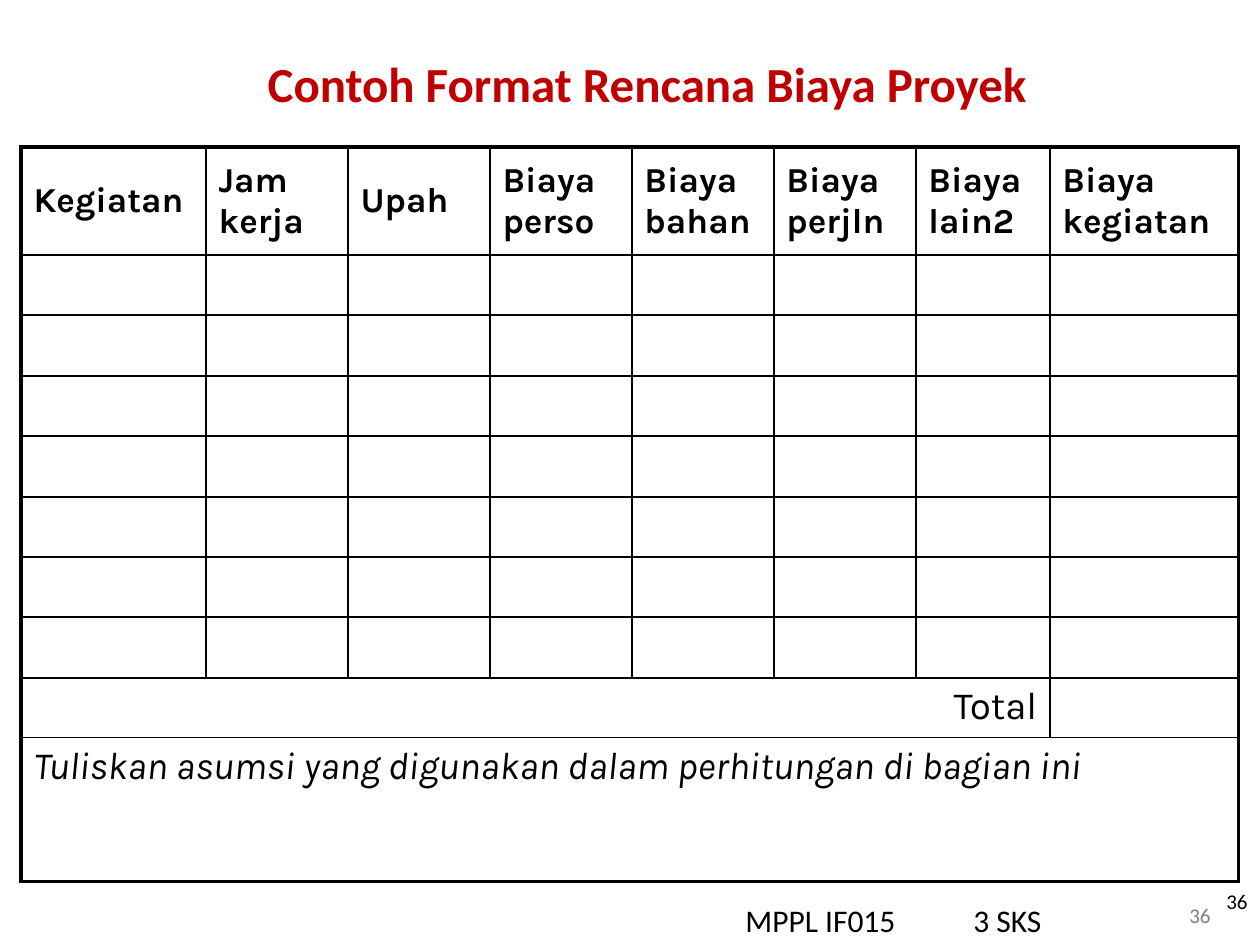
from dataclasses import dataclass

from lxml.etree import SubElement
from pptx import Presentation
from pptx.dml.color import RGBColor
from pptx.enum.text import MSO_ANCHOR as Anchor, PP_ALIGN as Align
from pptx.oxml import parse_xml
from pptx.oxml.ns import nsdecls, qn
from pptx.util import Pt

PX = 914400 // 126
BLACK = RGBColor(0, 0, 0)
RED = RGBColor(0xC0, 0, 0)
GRAY = RGBColor(0x80, 0x80, 0x80)

HEADERS = ("Kegiatan", "Jam kerja", "Upah", "Biaya perso", "Biaya bahan",
           "Biaya perjln", "Biaya lain2", "Biaya kegiatan")
COLUMN_WIDTHS = (185, *[142] * 5, 134, 189)
HEADER_HEIGHT, NOTE_HEIGHT = 108, 144
BODY_ROWS, BODY_HEIGHT = 8, 483
BODY_EDGES = [round(BODY_HEIGHT * i / BODY_ROWS) for i in range(BODY_ROWS + 1)]
ROW_HEIGHTS = (HEADER_HEIGHT,
               *[b - a for a, b in zip(BODY_EDGES, BODY_EDGES[1:])],
               NOTE_HEIGHT)
OUTER_LINE, INNER_LINE = Pt(2.25), Pt(1)


@dataclass(frozen=True)
class Label:
    text: str
    box: tuple[int, int, int, int]
    size: int
    color: RGBColor = BLACK
    align: Align = Align.LEFT
    anchor: Anchor = Anchor.TOP
    bold: bool = False
    tab: int = 0


TITLE = Label("Contoh Format Rencana Biaya Proyek", (95, 42, 1104, 81), 28,
              RED, Align.CENTER, Anchor.MIDDLE, bold=True)
FOOTERS = (
    Label("MPPL IF015\t3 SKS", (733, 895, 527, 40), 18, tab=228),
    Label("36", (966, 876, 294, 50), 12, align=Align.RIGHT, anchor=Anchor.MIDDLE),
    Label("36", (998, 896, 225, 38), 12, GRAY, Align.RIGHT),
)


def set_all(target, values: dict) -> None:
    for name, value in values.items():
        setattr(target, name, value)


def write(frame, text: str, size: int, font: str, color: RGBColor = BLACK,
          align: Align = Align.LEFT, bold: bool = False, italic: bool = False):
    paragraph = frame.paragraphs[0]
    paragraph.alignment = align
    run = paragraph.add_run()
    run.text = text
    set_all(run.font, {"name": font, "size": Pt(size), "bold": bold, "italic": italic})
    run.font.color.rgb = color
    return paragraph


def fill_label(shape, label: Label) -> None:
    left, top, width, height = (value * PX for value in label.box)
    set_all(shape, {"left": left, "top": top, "width": width, "height": height})
    frame = shape.text_frame
    set_all(frame, {"word_wrap": True, "vertical_anchor": label.anchor})
    paragraph = write(frame, label.text, label.size, "Calibri", label.color,
                      label.align, label.bold)
    if label.tab:
        tabs = SubElement(paragraph._p.get_or_add_pPr(), qn("a:tabLst"))
        SubElement(tabs, qn("a:tab"), pos=str(label.tab * PX), algn="l")


def draw_borders(cell, row: int, column: int) -> None:
    """Give the cell thick lines on the table's outside and thin ones inside."""
    outside = {
        "L": column == 0,
        "R": column + cell.span_width == len(COLUMN_WIDTHS),
        "T": row == 0,
        "B": row + cell.span_height == len(ROW_HEIGHTS),
    }
    properties = cell._tc.get_or_add_tcPr()
    for index, (side, is_outer) in enumerate(outside.items()):
        width = OUTER_LINE if is_outer else INNER_LINE
        properties.insert(index, parse_xml(
            f'<a:ln{side} {nsdecls("a")} w="{int(width)}"><a:solidFill>'
            f'<a:srgbClr val="{BLACK}"/></a:solidFill></a:ln{side}>'))


def draw_cost_table(slide) -> None:
    rows, columns = len(ROW_HEIGHTS), len(COLUMN_WIDTHS)
    table = slide.shapes.add_table(rows, columns, 21 * PX, 147 * PX,
                                   sum(COLUMN_WIDTHS) * PX, sum(ROW_HEIGHTS) * PX).table
    set_all(table, {"first_row": False, "horz_banding": False})
    for column, width in zip(table.columns, COLUMN_WIDTHS):
        column.width = width * PX
    for row, height in zip(table.rows, ROW_HEIGHTS):
        row.height = height * PX

    total, note = table.cell(rows - 2, 0), table.cell(rows - 1, 0)
    total.merge(table.cell(rows - 2, columns - 2))
    note.merge(table.cell(rows - 1, columns - 1))
    for row in range(rows):
        for column in range(columns):
            cell = table.cell(row, column)
            cell.fill.background()
            if not cell.is_spanned:
                draw_borders(cell, row, column)

    for column, header in enumerate(HEADERS):
        cell = table.cell(0, column)
        cell.vertical_anchor = Anchor.MIDDLE
        write(cell.text_frame, header, 20, "Karla", bold=True)
    write(total.text_frame, "Total", 22, "Karla", align=Align.RIGHT)
    write(note.text_frame,
          "Tuliskan asumsi yang digunakan dalam perhitungan di bagian ini",
          22, "Karla", italic=True)


def main() -> None:
    presentation = Presentation()
    set_all(presentation, {"slide_width": 1260 * PX, "slide_height": 945 * PX})
    slide = presentation.slides.add_slide(presentation.slide_layouts[5])
    fill_label(slide.shapes.title, TITLE)
    draw_cost_table(slide)
    for footer in FOOTERS:
        fill_label(slide.shapes.add_textbox(0, 0, PX, PX), footer)
    presentation.save("out.pptx")


if __name__ == "__main__":
    main()
